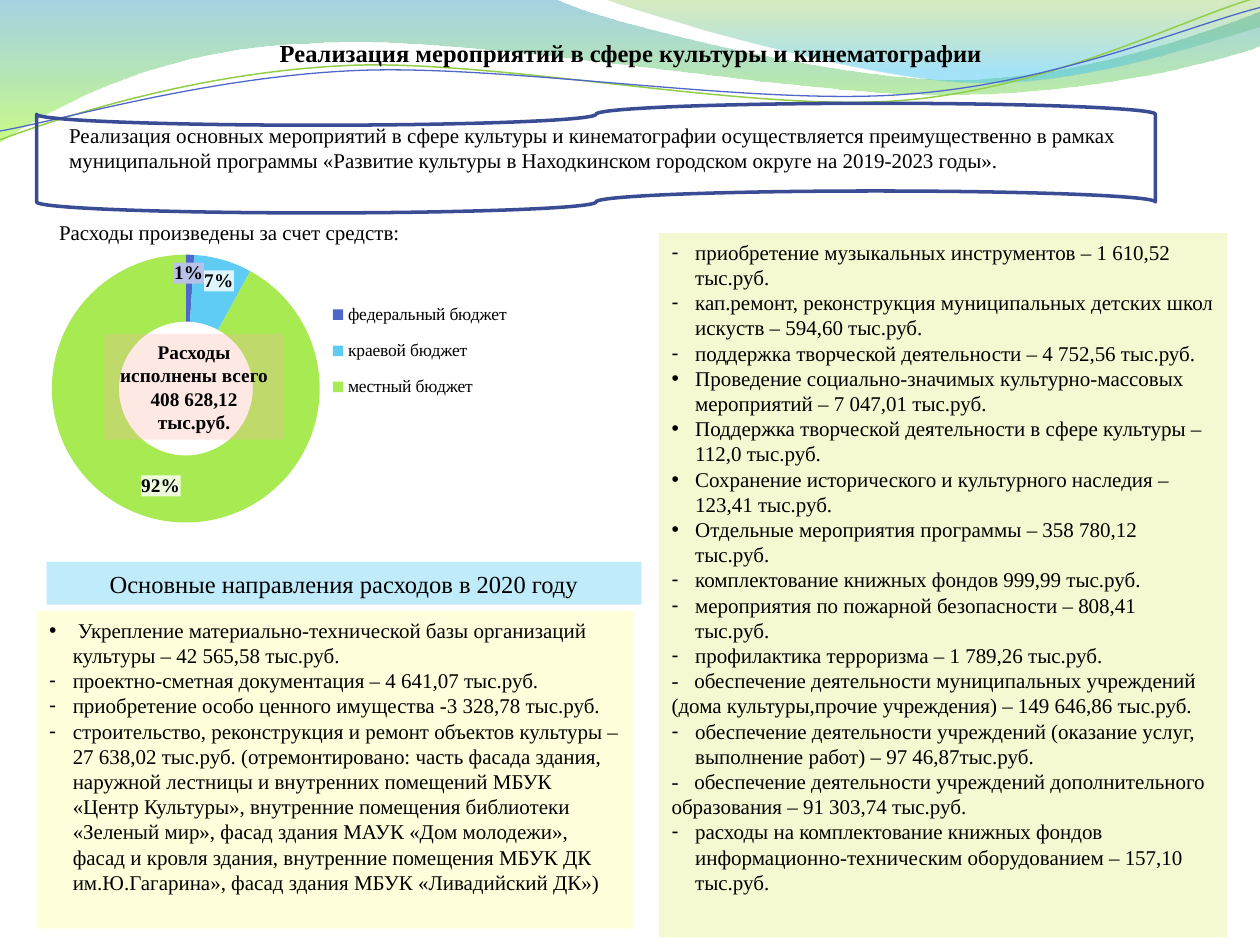
from dataclasses import dataclass

from pptx import Presentation
from pptx.chart.data import CategoryChartData
from pptx.dml.color import RGBColor
from pptx.enum.chart import XL_CHART_TYPE, XL_LEGEND_POSITION
from pptx.enum.shapes import MSO_SHAPE
from pptx.enum.text import MSO_ANCHOR, MSO_AUTO_SIZE, PP_ALIGN
from pptx.oxml import parse_xml
from pptx.oxml.ns import nsdecls, qn
from pptx.util import Inches, Pt

RECTANGLE, TAPE = MSO_SHAPE.RECTANGLE, MSO_SHAPE.FLOWCHART_PUNCHED_TAPE
LEFT, CENTER = PP_ALIGN.LEFT, PP_ALIGN.CENTER
TOP, MIDDLE = MSO_ANCHOR.TOP, MSO_ANCHOR.MIDDLE
NO_AUTOFIT = MSO_AUTO_SIZE.NONE
DOUGHNUT = XL_CHART_TYPE.DOUGHNUT
LEGEND_RIGHT = XL_LEGEND_POSITION.RIGHT

BLACK = RGBColor(0x00, 0x00, 0x00)
TEAL = RGBColor(0x3B, 0x9C, 0xBF)
LIME = RGBColor(0x9C, 0xFA, 0x24)
OLIVE = RGBColor(0x7E, 0xBE, 0x2C)
SKY = RGBColor(0x39, 0xC1, 0xF1)
LEAF = RGBColor(0x93, 0xCE, 0x48)
INDIGO = RGBColor(0x4E, 0x67, 0xC8)
CYAN = RGBColor(0x5E, 0xCC, 0xF3)
GREEN = RGBColor(0xA7, 0xEA, 0x52)
PALE_INDIGO = RGBColor(0xB8, 0xC2, 0xE9)
PALE_CYAN = RGBColor(0xDF, 0xF5, 0xFD)
PALE_GREEN = RGBColor(0xED, 0xFB, 0xDB)
NAVY = RGBColor(0x3A, 0x4C, 0x94)
CORAL = RGBColor(0xF9, 0xB3, 0xA7)
PALE_BLUE = RGBColor(0xBF, 0xEB, 0xFA)
YELLOW = RGBColor(0xFF, 0xFF, 0x99)
KHAKI = RGBColor(0xEC, 0xF4, 0xA2)

SERIF = "Times New Roman"
HANG = Pt(13.5)
DASH = "- "
TITLE_FONT = {"name": SERIF, "size": Pt(14), "bold": True}
HEADING_FONT = {"name": SERIF, "size": Pt(14), "bold": False}
TEXT_FONT = {"name": SERIF, "size": Pt(12), "bold": False}
TOTAL_FONT = {"name": SERIF, "size": Pt(11), "bold": True}
CHART_FONT = {"name": "TeX Gyre Pagella", "size": Pt(10)}
LEGEND_FONT = {"name": SERIF, "size": Pt(10)}


@dataclass(frozen=True)
class Wave:
    start: tuple[float, float]
    segments: list[list[tuple[float, float]]]
    stops: tuple = ()
    line: RGBColor | None = None
    width: float = 0


@dataclass(frozen=True)
class Item:
    text: str
    bullet: str = "-"


@dataclass(frozen=True)
class Sector:
    name: str
    share: int
    color: RGBColor
    label_color: RGBColor
    shift: tuple[float, float]


WAVES = [
    Wave((0, 0), [[(4.4, -0.01)],
                  [(4.76, 0.17), (6.64, 0.63), (7.58, 0.63)],
                  [(8.53, 0.63), (9.58, 0.26), (10, 0.09)],
                  [(10.01, 0.36)],
                  [(9.83, 0.44), (8.7, 0.76), (7.46, 0.75)],
                  [(6.22, 0.75), (3.82, 0.28), (2.57, 0.34)],
                  [(1.29, 0.36), (0.46, 0.83), (-0.01, 1.13)]],
         stops=((0, TEAL, 45), (1, LIME, 55))),
    Wave((4.79, -0.01), [[(5.09, 0.11), (6.82, 0.62), (7.69, 0.65)],
                         [(8.56, 0.69), (9.61, 0.32), (10, 0.21)],
                         [(10, 0)]],
         stops=((0, OLIVE, 30), (0.8, SKY, 45))),
    Wave((0, 1.11), [[(0.48, 0.93), (1.58, 0.57), (2.77, 0.52)],
                     [(3.95, 0.47), (5.93, 0.89), (7.13, 0.8)],
                     [(8.33, 0.71), (9.38, 0.15), (9.98, -0.02)]], line=LEAF, width=0.85),
    Wave((0, 1.04), [[(0.47, 0.96), (1.64, 0.61), (2.83, 0.56)],
                     [(4.03, 0.51), (5.97, 0.84), (7.17, 0.75)],
                     [(8.36, 0.67), (9.41, 0.21), (10, 0.06)]], line=INDIGO, width=0.75),
]
SECTORS = [
    Sector("федеральный бюджет", 1, INDIGO, PALE_INDIGO, (0, -0.04)),
    Sector("краевой бюджет", 7, CYAN, PALE_CYAN, (0.01, -0.03)),
    Sector("местный бюджет", 92, GREEN, PALE_GREEN, (0, 0)),
]
LEFT_ITEMS = [
    Item(" Укрепление материально-технической базы организаций культуры – 42 565,58 тыс.руб.", "•"),
    Item("проектно-сметная документация – 4 641,07 тыс.руб."),
    Item("приобретение особо ценного имущества -3 328,78 тыс.руб."),
    Item("строительство, реконструкция и ремонт объектов культуры – 27 638,02 тыс.руб. (отремонтировано: часть фасада здания, наружной лестницы и внутренних помещений МБУК «Центр Культуры», внутренние помещения библиотеки «Зеленый мир», фасад здания МАУК «Дом молодежи», фасад и кровля здания, внутренние помещения МБУК ДК им.Ю.Гагарина», фасад здания МБУК «Ливадийский ДК»)"),
]
RIGHT_ITEMS = [
    Item("приобретение музыкальных инструментов – 1 610,52 тыс.руб."),
    Item("кап.ремонт, реконструкция муниципальных детских школ искуств – 594,60 тыс.руб."),
    Item("поддержка творческой деятельности – 4 752,56 тыс.руб."),
    Item("Проведение социально-значимых культурно-массовых мероприятий – 7 047,01 тыс.руб.", "•"),
    Item("Поддержка творческой деятельности в сфере культуры – 112,0 тыс.руб.", "•"),
    Item("Сохранение исторического и культурного наследия – 123,41 тыс.руб.", "•"),
    Item("Отдельные мероприятия программы – 358 780,12 тыс.руб.", "•"),
    Item("комплектование книжных фондов 999,99 тыс.руб."),
    Item("мероприятия по пожарной безопасности – 808,41 тыс.руб."),
    Item("профилактика терроризма – 1 789,26 тыс.руб."),
    Item("- обеспечение деятельности муниципальных учреждений (дома культуры,прочие учреждения) – 149 646,86 тыс.руб.", ""),
    Item("обеспечение деятельности учреждений (оказание услуг, выполнение работ) – 97 46,87тыс.руб."),
    Item("- обеспечение деятельности учреждений дополнительного", ""),
    Item("образования – 91 303,74 тыс.руб.", ""),
    Item("расходы на комплектование книжных фондов информационно-техническим оборудованием – 157,10 тыс.руб."),
]


def format_font(font, values: dict) -> None:
    for name, value in values.items():
        setattr(font, name, value)
    font.color.rgb = BLACK


def place(shape, box: tuple) -> None:
    for name, value in zip(("left", "top", "width", "height"), box):
        setattr(shape, name, Inches(value))


def set_alpha(shape, *percents: int) -> None:
    for color, percent in zip(shape.element.spPr.iter(qn("a:srgbClr")), percents):
        color.append(parse_xml(f'<a:alpha {nsdecls("a")} val="{percent * 1000}"/>'))


def fill_solid(shape, color: RGBColor, alpha: int = 100) -> None:
    shape.fill.solid()
    shape.fill.fore_color.rgb = color
    if alpha < 100:
        set_alpha(shape, alpha)


def write(shape, lines: list[str], font: dict, align=LEFT, anchor=TOP, wrap=True) -> None:
    frame = shape.text_frame
    for name, value in {"word_wrap": wrap, "auto_size": NO_AUTOFIT, "vertical_anchor": anchor}.items():
        setattr(frame, name, value)
    for index, line in enumerate(lines):
        paragraph = frame.add_paragraph() if index else frame.paragraphs[0]
        paragraph.alignment = align
        paragraph.space_before = Pt(0)
        parts = [DASH, line.removeprefix(DASH)] if line.startswith(DASH) else [line]
        for part in parts:
            run = paragraph.add_run()
            run.text = part
            format_font(run.font, font)
            if part == DASH:
                run._r.get_or_add_rPr().set("spc", "300")


def bend(shape, segments: list) -> None:
    lines = list(shape.element.iter(qn("a:lnTo")))
    for segment in segments:
        group, lines = lines[:len(segment)], lines[len(segment):]
        if len(group) == 3:
            curve = parse_xml(f'<a:cubicBezTo {nsdecls("a")}/>')
            group[0].addprevious(curve)
            for line in group:
                curve.append(line[0])
                line.getparent().remove(line)


def draw_wave(slide, wave: Wave) -> None:
    points = [(Inches(x), Inches(y)) for segment in wave.segments for x, y in segment]
    builder = slide.shapes.build_freeform(*map(Inches, wave.start))
    builder.add_line_segments(points, close=bool(wave.stops))
    shape = builder.convert_to_shape()
    bend(shape, wave.segments)
    shape.shadow.inherit = False
    if wave.stops:
        shape.fill.gradient()
        shape.fill.gradient_angle = 270
        for stop, (position, color, _) in zip(shape.fill.gradient_stops, wave.stops):
            stop.position = position
            stop.color.rgb = color
        set_alpha(shape, *(alpha for _, _, alpha in wave.stops))
        shape.line.fill.background()
    else:
        shape.fill.background()
        shape.line.color.rgb = wave.line
        shape.line.width = Pt(wave.width)
    slide.shapes.title.element.addprevious(shape.element)


def draw_list(placeholder, box: tuple, color: RGBColor, alpha: int, items: list[Item]) -> None:
    place(placeholder, box)
    fill_solid(placeholder, color, alpha)
    write(placeholder, [item.text for item in items], TEXT_FONT)
    for item, paragraph in zip(items, placeholder.text_frame.paragraphs):
        hang = HANG if item.bullet else 0
        mark = f'buChar {nsdecls("a")} char="{item.bullet}"' if item.bullet else f'buNone {nsdecls("a")}'
        properties = paragraph._p.get_or_add_pPr()
        properties.set("marL", str(int(hang)))
        properties.set("indent", str(-int(hang)))
        properties.append(parse_xml(f"<a:{mark}/>"))


def draw_box(slide, box: tuple, color: RGBColor, alpha: int, text: str, font: dict) -> None:
    shape = slide.shapes.add_shape(RECTANGLE, *map(Inches, box))
    shape.shadow.inherit = False
    fill_solid(shape, color, alpha)
    shape.line.fill.background()
    write(shape, [text], font, CENTER, MIDDLE)


def draw_text(slide, box: tuple, text: str, wrap: bool) -> None:
    write(slide.shapes.add_textbox(*map(Inches, box)), [text], TEXT_FONT, wrap=wrap)


def set_layout(parent, index: int, box: tuple, target: str = "") -> None:
    for layout in parent.findall(qn("c:layout")):
        parent.remove(layout)
    inner = f'<c:layoutTarget val="{target}"/>' if target else ""
    sizes = "".join(f'<c:{name} val="{value}"/>' for name, value in zip("xywh", box))
    parent.insert(index, parse_xml(
        f'<c:layout {nsdecls("c")}><c:manualLayout>{inner}<c:xMode val="edge"/>'
        f'<c:yMode val="edge"/>{sizes}</c:manualLayout></c:layout>'))


def labels_xml(sectors: list[Sector]):
    flags = "".join(f'<c:show{name} val="{int(name == "Percent")}"/>' for name in
                    ("LegendKey", "Val", "CatName", "SerName", "Percent", "BubbleSize"))
    number = '<c:numFmt formatCode="0%" sourceLinked="0"/>'
    text = (f'<c:txPr><a:bodyPr/><a:p><a:pPr><a:defRPr sz="1100" b="1"><a:solidFill><a:srgbClr val="{BLACK}"/>'
            f'</a:solidFill><a:latin typeface="{SERIF}"/></a:defRPr></a:pPr></a:p></c:txPr>')
    labels = "".join(
        f'<c:dLbl><c:idx val="{index}"/><c:layout><c:manualLayout><c:x val="{sector.shift[0]}"/>'
        f'<c:y val="{sector.shift[1]}"/></c:manualLayout></c:layout>{number}<c:spPr><a:solidFill>'
        f'<a:srgbClr val="{sector.label_color}"/></a:solidFill></c:spPr>{text}{flags}</c:dLbl>'
        for index, sector in enumerate(sectors))
    return parse_xml(f'<c:dLbls {nsdecls("c", "a")}>{labels}{number}{text}{flags}</c:dLbls>')


def draw_chart(slide, box: tuple, sectors: list[Sector]) -> None:
    data = CategoryChartData()
    data.categories = [sector.name for sector in sectors]
    data.add_series("Series 1", [sector.share for sector in sectors])
    chart = slide.shapes.add_chart(DOUGHNUT, *map(Inches, box), data).chart
    chart.has_title = False
    format_font(chart.font, CHART_FONT)
    chart.plots[0].vary_by_categories = True
    for index, sector in enumerate(sectors):
        fill = chart.plots[0].series[0].points[index].format.fill
        fill.solid()
        fill.fore_color.rgb = sector.color
    chart.has_legend = True
    chart.legend.position = LEGEND_RIGHT
    chart.legend.include_in_layout = False
    format_font(chart.legend.font, LEGEND_FONT)
    root = chart.element
    root.find(f'.//{qn("c:cat")}').addprevious(labels_xml(sectors))
    set_layout(root.find(f'.//{qn("c:plotArea")}'), 0, (0.07, 0.05, 0.51, 0.71), "inner")
    set_layout(root.find(f'.//{qn("c:legend")}'), 1, (0.57, 0.14, 0.4, 0.33))


def main() -> None:
    presentation = Presentation()
    presentation.slide_width, presentation.slide_height = Inches(10), Inches(7.5)
    slide = presentation.slides.add_slide(presentation.slide_layouts[3])
    title, left_list, right_list = slide.placeholders
    for wave in WAVES:
        draw_wave(slide, wave)
    place(title, (2.12, 0.25, 5.83, 0.57))
    write(title, ["Реализация мероприятий в сфере культуры и кинематографии"], TITLE_FONT, wrap=False)
    draw_text(slide, (0.45, 0.92, 9.28, 0.5), "Реализация основных мероприятий в сфере культуры и кинематографии осуществляется преимущественно в рамках муниципальной программы «Развитие культуры в Находкинском городском округе на 2019-2023 годы».", True)
    draw_chart(slide, (0.12, 1.87, 4.17, 3), SECTORS)
    draw_text(slide, (0.37, 1.69, 3.01, 0.3), "Расходы произведены за счет средств:", False)
    draw_box(slide, (0.83, 2.65, 1.42, 0.84), CORAL, 30, "Расходы исполнены всего 408 628,12 тыс.руб.", TOTAL_FONT)
    draw_box(slide, (0.37, 4.46, 4.72, 0.34), PALE_BLUE, 100, "Основные направления расходов в 2020 году", HEADING_FONT)
    draw_list(left_list, (0.29, 4.85, 4.74, 2.52), YELLOW, 34, LEFT_ITEMS)
    draw_list(right_list, (5.23, 1.85, 4.51, 5.59), KHAKI, 49, RIGHT_ITEMS)
    tape = slide.shapes.add_shape(TAPE, *map(Inches, (0.29, 0.82, 8.88, 0.87)))
    tape.shadow.inherit = False
    tape.fill.background()
    tape.line.color.rgb = NAVY
    tape.line.width = Pt(2)
    presentation.save("out.pptx")


if __name__ == "__main__":
    main()
